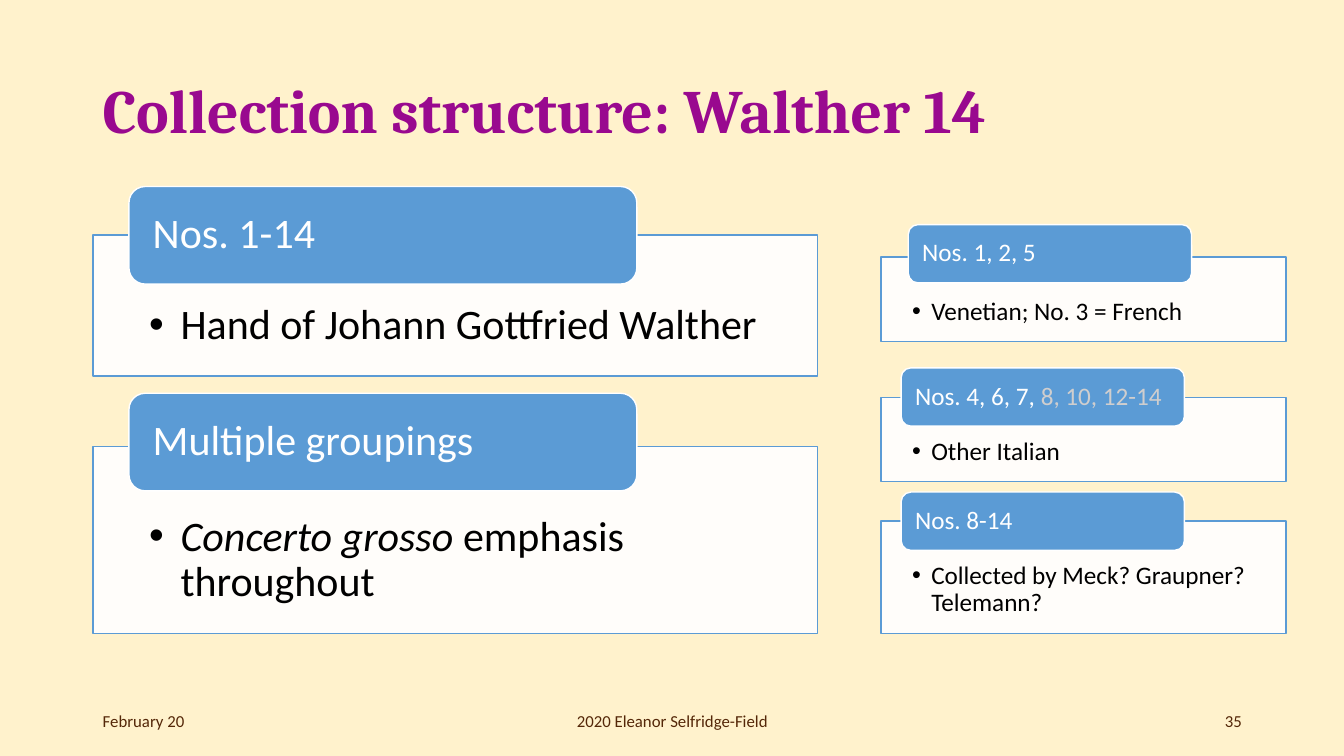
from lxml import etree
from pptx import Presentation
from pptx.dml.color import RGBColor
from pptx.enum.shapes import MSO_SHAPE
from pptx.enum.text import MSO_ANCHOR, PP_ALIGN
from pptx.oxml.ns import qn
from pptx.util import Cm, Pt

RECTANGLE, ROUNDED = MSO_SHAPE.RECTANGLE, MSO_SHAPE.ROUNDED_RECTANGLE
TOP, MIDDLE = MSO_ANCHOR.TOP, MSO_ANCHOR.MIDDLE
LEFT, CENTER, RIGHT = PP_ALIGN.LEFT, PP_ALIGN.CENTER, PP_ALIGN.RIGHT

# Content: runs are (text, style) pairs
TITLE = "Collection structure: Walther 14"
FOOTERS = [  # text, left, width, alignment
    ("February 20", 2.34, 7.62, LEFT),
    ("2020 Eleanor Selfridge-Field", 11.23, 11.43, CENTER),
    ("35", 23.93, 7.62, RIGHT),
]
MAIN_ENTRIES = [  # panel top, panel height, tab left, tab top, label, body
    (5.92, 3.56, 3.25, 4.7, [("Nos. 1-14", "")],
     [("Hand of Johann Gottfried Walther", "")]),
    (11.25, 4.72, 3.25, 9.91, [("Multiple groupings", "")],
     [("Concerto grosso", "italic"), (" emphasis throughout", "")]),
]
SIDE_ENTRIES = [
    (6.48, 2.13, 22.89, 5.66, [("Nos. 1, 2, 5", "")],
     [("Venetian; No. 3 = French", "")]),
    (10.01, 2.13, 22.71, 9.27, [("Nos. 4, 6, 7, ", ""), ("8, 10, 12-14", "muted")],
     [("Other Italian", "")]),
    (13.13, 2.84, 22.71, 12.4, [("Nos. 8-14", "")],
     [("Collected by Meck? Graupner? Telemann?", "")]),
]
# Insets are left, top, right, bottom
COLUMNS = [
    dict(entries=MAIN_ENTRIES, left=2.34, width=18.26, tab=(12.8, 2.46), size=30,
         panel_insets=(1.42, 1.73, 1.42, 0.58), tab_inset=0.48, hanging=0.79),
    dict(entries=SIDE_ENTRIES, left=22.2, width=10.21, tab=(7.14, 1.47), size=18,
         panel_insets=(0.79, 1.04, 0.79, 0.36), tab_inset=0.28, hanging=0.48),
]
THEME = dict(
    background="FFF2CC", title="99098F", footer="542708", accent="5B9BD5",
    white="FFFFFF", black="000000", muted="D0CECE", panel_alpha=90,
    heading_font="Cambria", body_font="Calibri", title_size=44, footer_size=12,
)


def color(name):
    return RGBColor.from_string(THEME[name])


def write(box, runs, size, color_name, font="body_font", anchor=MIDDLE,
          align=LEFT, insets=(0.25, 0.13, 0.25, 0.13), spacing=0.9):
    frame = box.text_frame
    frame.word_wrap = True
    frame.vertical_anchor = anchor
    (frame.margin_left, frame.margin_top,
     frame.margin_right, frame.margin_bottom) = map(Cm, insets)
    para = frame.paragraphs[0]
    para.alignment = align
    para.line_spacing = spacing
    para.font.name = THEME[font]
    para.font.size = Pt(size)
    para.font.color.rgb = color(color_name)
    for text, style in runs:
        span = para.add_run()
        span.text = text
        if style == "italic":
            span.font.italic = True
        elif style:
            span.font.color.rgb = color(style)
    return para


def add_text(page, bounds, text, *args, **options):
    box = page.shapes.add_textbox(*map(Cm, bounds))
    return write(box, [(text, "")], *args, **options)


def add_box(page, kind, bounds, fill, line):
    box = page.shapes.add_shape(kind, *map(Cm, bounds))
    box.shadow.inherit = False
    box.fill.solid()
    box.fill.fore_color.rgb = color(fill)
    box.line.color.rgb = color(line)
    box.line.width = Pt(1)
    return box


def add_bullet(para, hanging):
    properties = para._p.get_or_add_pPr()
    properties.set("marL", str(Cm(hanging)))
    properties.set("indent", str(-Cm(hanging)))
    etree.SubElement(properties, qn("a:buFont")).set("typeface", "Arial")
    etree.SubElement(properties, qn("a:buChar")).set("char", "•")


def add_entry(page, column, entry):
    panel_top, panel_height, tab_left, tab_top, label, body = entry
    # Translucent panel with a bulleted line
    panel = add_box(page, RECTANGLE,
                    (column["left"], panel_top, column["width"], panel_height),
                    "white", "accent")
    fill_color = panel.fill._xPr.find(qn("a:solidFill"))[0]
    etree.SubElement(fill_color, qn("a:alpha")).set("val", str(THEME["panel_alpha"] * 1000))
    para = write(panel, body, column["size"], "black", anchor=TOP,
                 insets=column["panel_insets"])
    add_bullet(para, column["hanging"])
    # Tab over the panel's top edge
    tab = add_box(page, ROUNDED, (tab_left, tab_top, *column["tab"]), "accent", "white")
    inset = column["tab_inset"]
    write(tab, label, column["size"], "white", insets=(inset, 0, inset, 0))


def main():
    deck = Presentation()
    deck.slide_width, deck.slide_height = Cm(33.87), Cm(19.05)
    page = deck.slides.add_slide(deck.slide_layouts[6])
    page.background.fill.solid()
    page.background.fill.fore_color.rgb = color("background")

    # Title
    title = add_text(page, (2.34, 1.02, 29.21, 3.68), TITLE,
                     THEME["title_size"], "title", font="heading_font")
    title.font.bold = True

    # Panels with tabs
    for column in COLUMNS:
        for entry in column["entries"]:
            add_entry(page, column, entry)

    # Footer
    for text, left, width, align in FOOTERS:
        add_text(page, (left, 17.65, width, 1.02), text,
                 THEME["footer_size"], "footer", align=align, spacing=1.0)

    deck.save("out.pptx")


if __name__ == "__main__":
    main()
